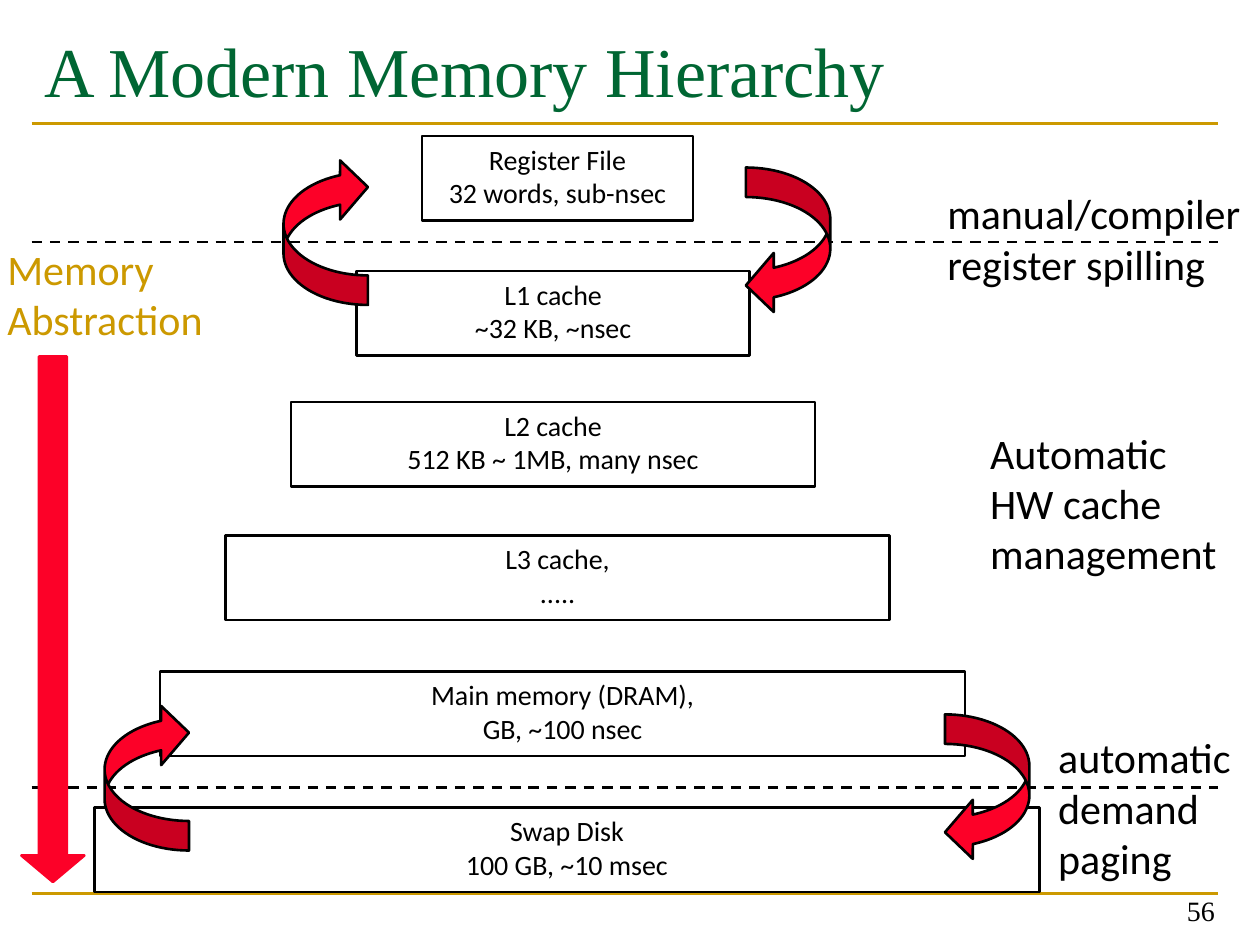
from lxml.etree import SubElement
from pptx import Presentation
from pptx.dml.color import RGBColor
from pptx.enum.dml import MSO_LINE
from pptx.enum.shapes import MSO_CONNECTOR, MSO_SHAPE
from pptx.enum.text import MSO_ANCHOR, PP_ALIGN
from pptx.oxml.ns import qn
from pptx.util import Inches, Pt

BLACK, GOLD, GREEN, RED = "000000", "CC9900", "006633", "FC0128"
SANS, SERIF = "Calibri", "Times New Roman"

LEVELS = [
    (3.35, 1.08, 2.15, ["Register File", "32 words, sub-nsec"]),
    (2.83, 2.15, 3.12, ["L1 cache", "~32 KB, ~nsec"]),
    (2.31, 3.19, 4.16, ["L2 cache", "512 KB ~ 1MB, many nsec"]),
    (1.79, 4.25, 5.27, ["L3 cache,", "....."]),
    (1.27, 5.33, 6.39, ["Main memory (DRAM),", "GB, ~100 nsec"]),
    (0.75, 6.41, 7.5, ["Swap Disk", "100 GB, ~10 msec"]),
]
LABELS = [
    (7.42, 1.44, 2.56, 0.91, GOLD and BLACK, ["manual/compiler", "register spilling"]),
    (8.3, 5.76, 1.59, 1.31, BLACK, ["automatic", "demand", "paging"]),
    (7.76, 3.34, 2.06, 1.31, BLACK, ["Automatic", "HW cache", "management"]),
    (-0.04, 1.88, 1.77, 0.91, GOLD, ["Memory", "Abstraction"]),
]
LABELS[0] = LABELS[0][:4] + (BLACK,) + LABELS[0][5:]
SWAPS = [(5.92, 1.33, 0), (7.5, 5.67, 0), (2.25, 1.25, 180), (0.83, 5.58, 180)]


def paint(color):
    return RGBColor.from_string(color)


def assign(item, form):
    for name, value in form.items():
        setattr(item, name, value)


def write(shape, lines, size, color, face=SANS, align=PP_ALIGN.LEFT,
          anchor=MSO_ANCHOR.TOP, wrap=True):
    frame = shape.text_frame
    assign(frame, {"word_wrap": wrap, "vertical_anchor": anchor,
                   "margin_left": Inches(0.1), "margin_right": Inches(0.1),
                   "margin_top": Inches(0.05), "margin_bottom": Inches(0.05)})
    frame.text = "\n".join(lines)
    for para in frame.paragraphs:
        para.alignment = align
        assign(para.font, {"size": Pt(size), "name": face})
        para.font.color.rgb = paint(color)


def add_text(slide, box, lines, size, color, **form):
    shape = slide.shapes.add_textbox(*map(Inches, box))
    write(shape, lines, size, color, **form)


def add_rule(slide, top, color, dash=None):
    rule = slide.shapes.add_connector(
        MSO_CONNECTOR.STRAIGHT, Inches(0.25), Inches(top), Inches(9.67), Inches(top))
    assign(rule.line, {"width": Pt(1.5), "dash_style": dash})
    rule.line.color.rgb = paint(color)
    SubElement(rule._element.spPr, qn("a:effectLst"))


def add_form(slide, kind, box, fill=None, line=BLACK, ratios=(), turn=0):
    shape = slide.shapes.add_shape(kind, *map(Inches, box))
    shape.shadow.inherit = False
    shape.rotation = turn
    for index, ratio in enumerate(ratios):
        shape.adjustments[index] = ratio
    if fill:
        shape.fill.solid()
        shape.fill.fore_color.rgb = paint(fill)
    else:
        shape.fill.background()
    shape.line.width = Pt(1.5)
    shape.line.color.rgb = paint(line)
    return shape


def add_title(slide, text):
    title = slide.shapes.title
    assign(title, {"left": Inches(0.25), "top": Inches(0.17),
                   "width": Inches(9.42), "height": Inches(1.17)})
    write(title, [text], 40, GREEN, face=SERIF)


def main():
    deck = Presentation()
    assign(deck, {"slide_width": Inches(10), "slide_height": Inches(7.5)})
    slide = deck.slides.add_slide(deck.slide_layouts[5])
    add_title(slide, "A Modern Memory Hierarchy")
    for top in (7.09, 0.98):
        add_rule(slide, top, GOLD)
    add_text(slide, (7.41, 6.91, 2.33, 0.5), ["56"], 16, BLACK, face=SERIF,
             align=PP_ALIGN.RIGHT, anchor=MSO_ANCHOR.BOTTOM)
    for left, top, width, lines in LEVELS:
        level = add_form(slide, MSO_SHAPE.RECTANGLE, (left, top, width, 0.67))
        write(level, lines, 16, BLACK, align=PP_ALIGN.CENTER)
    for top in (1.92, 6.25):
        add_rule(slide, top, BLACK, MSO_LINE.DASH)
    for left, top, turn in SWAPS:
        add_form(slide, MSO_SHAPE.CURVED_LEFT_ARROW, (left, top, 0.67, 1.17),
                 fill=RED, ratios=(0.35, 0.7, 0.33), turn=turn)
    for *box, color, lines in LABELS:
        add_text(slide, box, lines, 24, color, wrap=False)
    add_form(slide, MSO_SHAPE.DOWN_ARROW, (0.17, 2.83, 0.5, 4.17),
             fill=RED, line=RED, ratios=(0.44, 0.42))
    deck.save("out.pptx")


if __name__ == "__main__":
    main()
